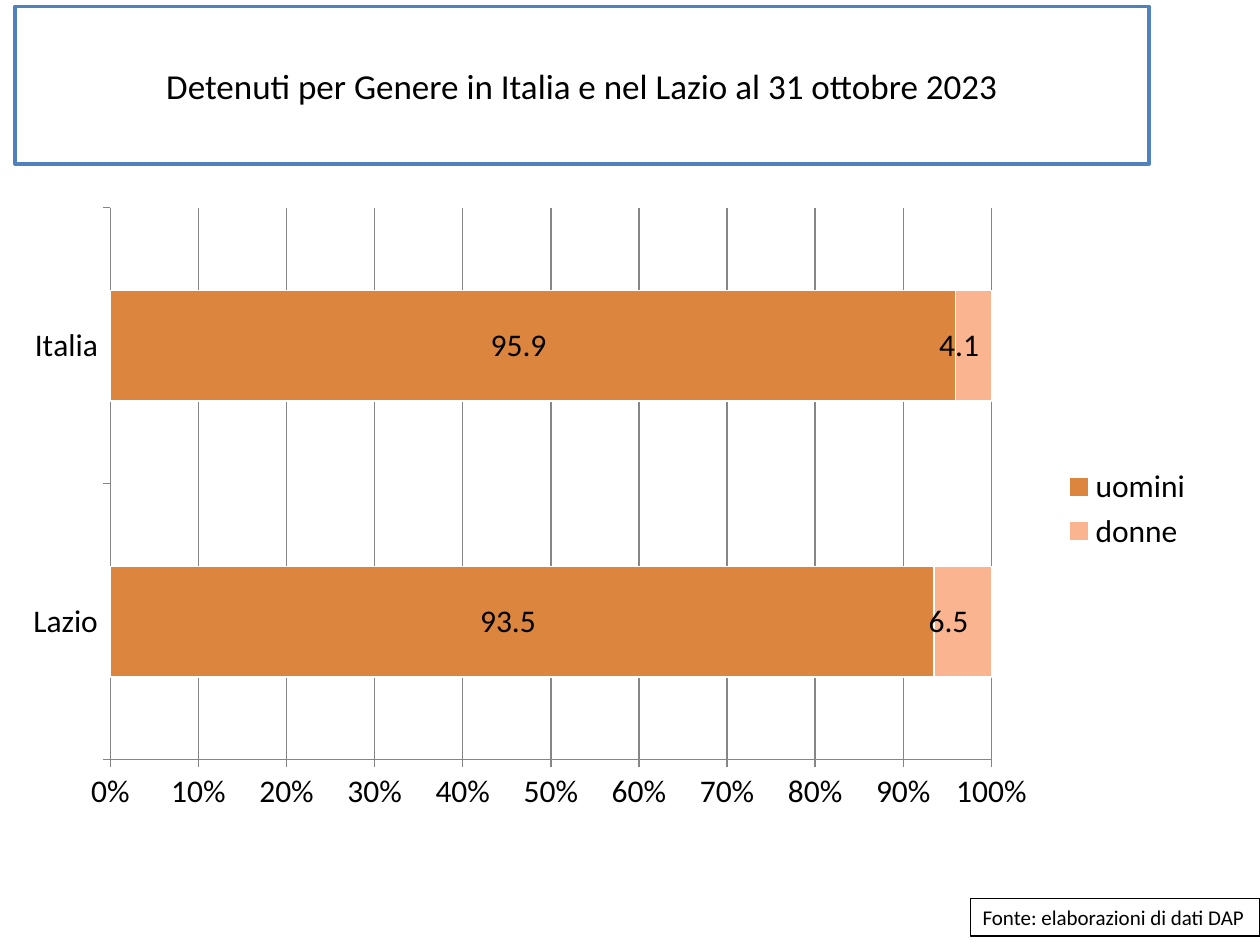
"""Build a slide comparing prisoners by gender in Italy and Lazio."""
from dataclasses import dataclass

from lxml import etree
from pptx import Presentation
from pptx.chart.data import CategoryChartData
from pptx.dml.color import RGBColor
from pptx.enum.chart import XL_CHART_TYPE, XL_LABEL_POSITION, XL_LEGEND_POSITION, XL_TICK_MARK
from pptx.enum.shapes import MSO_SHAPE
from pptx.enum.text import MSO_ANCHOR, PP_ALIGN
from pptx.oxml.ns import qn
from pptx.util import Inches, Pt

STACKED_BAR = XL_CHART_TYPE.BAR_STACKED_100
LABEL_CENTER = XL_LABEL_POSITION.CENTER
LEGEND_RIGHT = XL_LEGEND_POSITION.RIGHT
TICK_OUTSIDE = XL_TICK_MARK.OUTSIDE
RECTANGLE = MSO_SHAPE.RECTANGLE
MIDDLE = MSO_ANCHOR.MIDDLE
CENTER, LEFT = PP_ALIGN.CENTER, PP_ALIGN.LEFT

FONT = "Calibri"
COLORS = {
    "text": "000000",
    "paper": "FFFFFF",
    "title_border": "4F81BD",
    "grid": "868686",
    "men": "DC853E",
    "women": "FAB490",
}
CATEGORIES = ("Lazio", "Italia")
PLOT_LAYOUT = {"x": 0.08, "y": 0.02, "w": 0.74, "h": 0.88}


@dataclass
class TextBox:
    text: str
    left: float
    top: float
    width: float
    height: float
    size: int
    border: str
    border_width: float
    align: PP_ALIGN
    wrap: bool


@dataclass
class GenderSeries:
    name: str
    values: tuple[float, ...]
    color: str


BOXES = (
    TextBox("Detenuti per Genere in Italia e nel Lazio al 31 ottobre 2023",
            0.12, 0.05, 9, 1.25, 20, "title_border", 2, CENTER, True),
    TextBox("Fonte: elaborazioni di dati DAP",
            7.7, 7.13, 2.3, 0.3, 12, "text", 0.75, LEFT, False),
)
SERIES = (
    GenderSeries("uomini", (93.5, 95.9), "men"),
    GenderSeries("donne", (6.5, 4.1), "women"),
)


def rgb(name: str) -> RGBColor:
    """Return the named colour."""
    return RGBColor.from_string(COLORS[name])


def style_font(font, size: int) -> None:
    """Apply the slide's typeface and text colour."""
    font.name = FONT
    font.size = Pt(size)
    font.color.rgb = rgb("text")


def draw_box(slide, spec: TextBox) -> None:
    """Draw a bordered white box with one line of text."""
    box = slide.shapes.add_shape(RECTANGLE, Inches(spec.left), Inches(spec.top),
                                 Inches(spec.width), Inches(spec.height))
    box.shadow.inherit = False
    box.fill.solid()
    box.fill.fore_color.rgb = rgb("paper")
    box.line.color.rgb = rgb(spec.border)
    box.line.width = Pt(spec.border_width)
    frame = box.text_frame
    frame.text = spec.text
    frame.word_wrap = spec.wrap
    frame.vertical_anchor = MIDDLE
    para = frame.paragraphs[0]
    para.alignment = spec.align
    style_font(para.runs[0].font, spec.size)


def place_plot(chart) -> None:
    """Fix the inner plot area as fractions of the chart."""
    plot_area = chart.plots[0]._element.getparent()
    for old_layout in plot_area.findall(qn("c:layout")):
        plot_area.remove(old_layout)
    layout = etree.Element(qn("c:layout"))
    plot_area.insert(0, layout)
    manual = etree.SubElement(layout, qn("c:manualLayout"))
    settings = {"layoutTarget": "inner", "xMode": "edge", "yMode": "edge", **PLOT_LAYOUT}
    for tag, value in settings.items():
        etree.SubElement(manual, qn(f"c:{tag}")).set("val", str(value))


def style_series(series, color: str) -> None:
    """Colour a series and show its values."""
    series.format.fill.solid()
    series.format.fill.fore_color.rgb = rgb(color)
    series.format.line.color.rgb = rgb("paper")
    series.format.line.width = Pt(0.75)
    labels = series.data_labels
    labels.show_value = True
    labels.position = LABEL_CENTER
    labels.number_format = "#,##0.0\\ _€_-"
    labels.number_format_is_linked = False
    style_font(labels.font, 18)


def draw_chart(slide) -> None:
    """Draw the stacked percentage bars by gender."""
    data = CategoryChartData()
    data.categories = CATEGORIES
    for entry in SERIES:
        data.add_series(entry.name, entry.values)
    chart = slide.shapes.add_chart(STACKED_BAR, Inches(0.12), Inches(1.55),
                                   Inches(9.45), Inches(4.98), data).chart
    chart.has_title = False
    style_font(chart.font, 18)
    chart.has_legend = True
    chart.legend.position = LEGEND_RIGHT
    chart.legend.include_in_layout = False
    plot = chart.plots[0]
    plot.gap_width = 150
    plot.overlap = 100
    plot.vary_by_categories = False
    for series, entry in zip(plot.series, SERIES):
        style_series(series, entry.color)
    value_axis = chart.value_axis
    for axis in (chart.category_axis, value_axis):
        axis.major_tick_mark = TICK_OUTSIDE
        axis.format.line.color.rgb = rgb("grid")
    value_axis.minimum_scale = 0
    value_axis.has_major_gridlines = True
    value_axis.major_gridlines.format.line.color.rgb = rgb("grid")
    value_axis.tick_labels.number_format = "0%"
    value_axis.tick_labels.number_format_is_linked = False
    place_plot(chart)


def main() -> None:
    """Build and save the deck."""
    deck = Presentation()
    deck.slide_width, deck.slide_height = Inches(10), Inches(7.5)
    page = deck.slides.add_slide(deck.slide_layouts[6])
    for spec in BOXES:
        draw_box(page, spec)
    draw_chart(page)
    deck.save("out.pptx")


if __name__ == "__main__":
    main()
